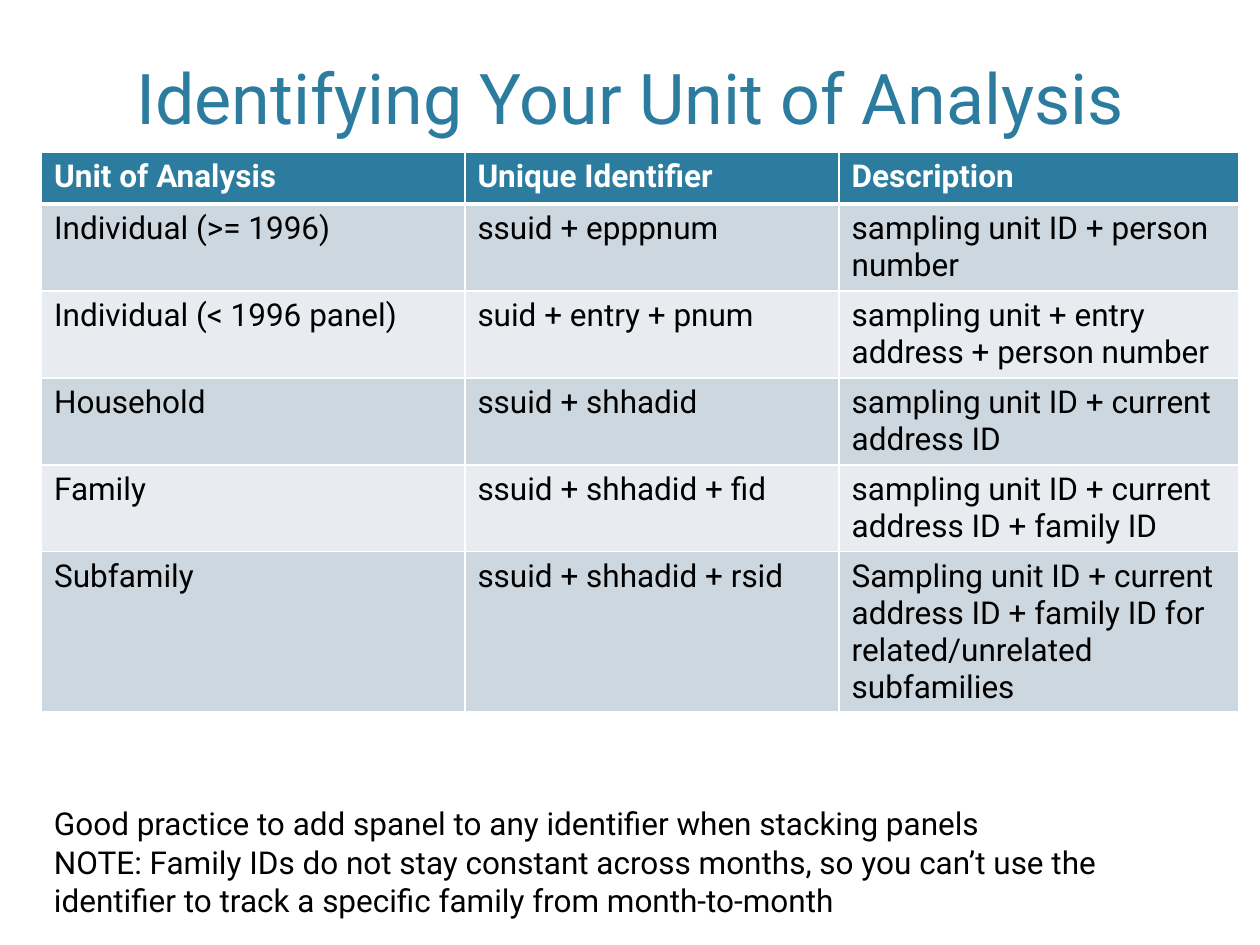
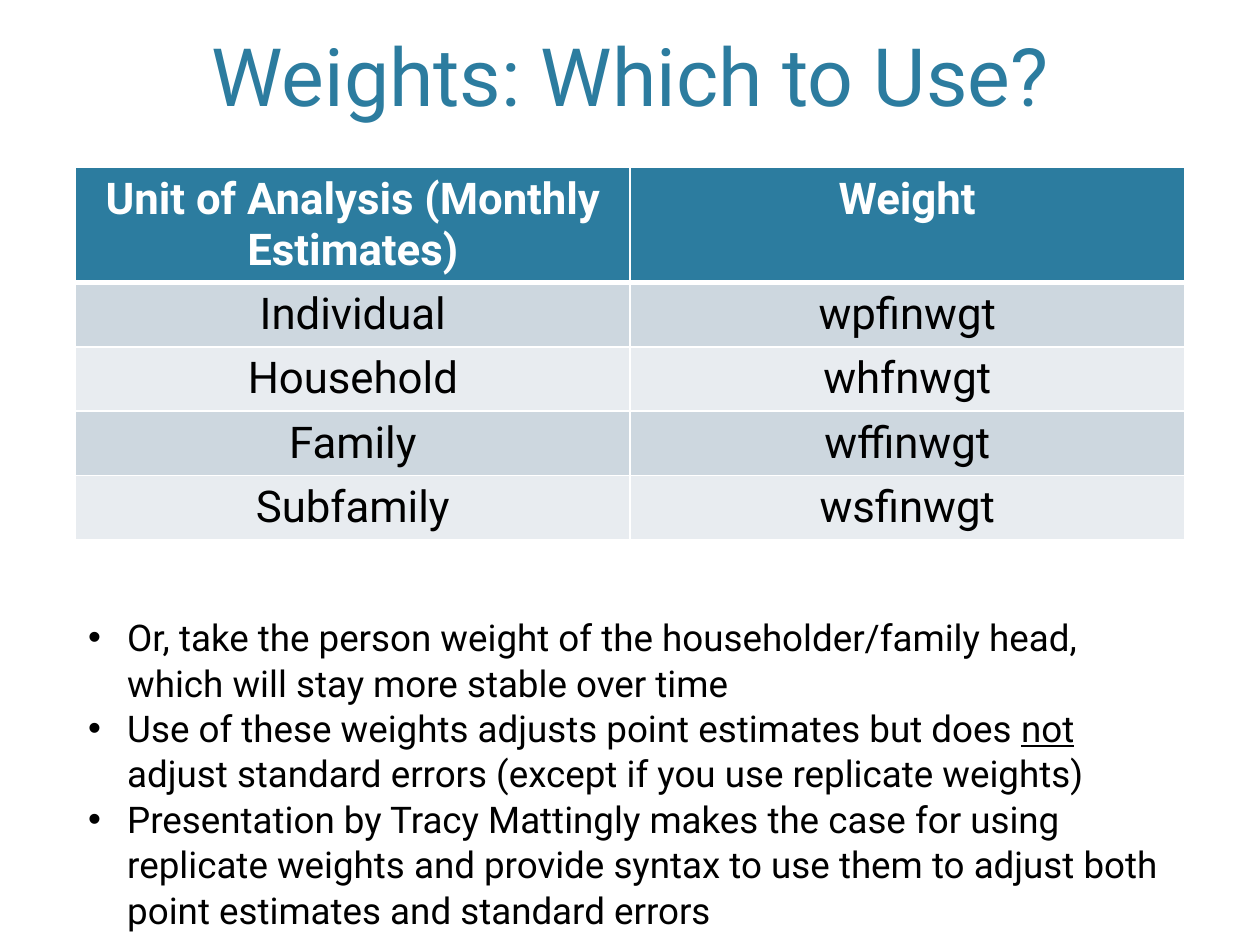
from lxml.etree import SubElement
from pptx import Presentation
from pptx.dml.color import RGBColor
from pptx.enum.text import MSO_ANCHOR as Anchor, MSO_AUTO_SIZE as AutoSize, PP_ALIGN as Align
from pptx.oxml.ns import qn
from pptx.util import Inches, Pt

FONT = "Roboto"
TEAL, WHITE, BLACK = "2C7C9F", "FFFFFF", "000000"
BANDS = ("CDD7DF", "E8ECF0")
TITLE_ONLY, TITLE_AND_BODY = 5, 1


def color(value):
    return RGBColor.from_string(value)


def border(cell, side, points):
    properties = cell._tc.get_or_add_tcPr()
    line = SubElement(properties, qn(f"a:ln{side}"), w=str(Pt(points)))
    fill = SubElement(line, qn("a:solidFill"))
    SubElement(fill, qn("a:srgbClr"), val=WHITE)
    properties.insert("LRTB".index(side), line)


class Deck:
    def __init__(self):
        self.prs = Presentation()
        self.prs.slide_width, self.prs.slide_height = Inches(10), Inches(7.5)
        self.slide = None

    def place(self, shape, left, top, width, height):
        shape.left, shape.top = Inches(left), Inches(top)
        shape.width, shape.height = Inches(width), Inches(height)

    def run(self, paragraph, text, size, fill=BLACK, bold=False, underline=False):
        run = paragraph.add_run()
        run.text = text
        font = run.font
        font.name, font.size, font.bold = FONT, Pt(size), bold
        font.color.rgb = color(fill)
        if underline:
            font.underline = True

    def add_slide(self, layout, title, size, height):
        self.slide = self.prs.slides.add_slide(self.prs.slide_layouts[layout])
        heading = self.slide.shapes.title
        self.place(heading, 0.6, 0.12, 8.8, height)
        frame = heading.text_frame
        frame.auto_size, frame.vertical_anchor = AutoSize.NONE, Anchor.BOTTOM
        frame.paragraphs[0].alignment = Align.CENTER
        self.run(frame.paragraphs[0], title, size, TEAL)

    def table(self, left, top, widths, heights, rows, size, align):
        table = self.slide.shapes.add_table(
            len(rows), len(widths), Inches(left), Inches(top),
            Inches(sum(widths)), Inches(sum(heights))).table
        table.horz_banding = False
        for column, width in zip(table.columns, widths):
            column.width = Inches(width)
        for r, (row, height) in enumerate(zip(rows, heights)):
            table.rows[r].height = Inches(height)
            header = r == 0
            for c, text in enumerate(row):
                cell = table.cell(r, c)
                cell.fill.solid()
                cell.fill.fore_color.rgb = color(TEAL if header else BANDS[(r - 1) % 2])
                for side in "LRTB":
                    heavy = (r, side) in ((0, "B"), (1, "T"))
                    border(cell, side, 3 if heavy else 1)
                paragraph = cell.text_frame.paragraphs[0]
                paragraph.alignment = align
                self.run(paragraph, text, size, WHITE if header else BLACK, header)

    def fill_text(self, frame, paragraphs, size):
        frame.word_wrap, frame.auto_size = True, AutoSize.NONE
        for i, runs in enumerate(paragraphs):
            paragraph = frame.add_paragraph() if i else frame.paragraphs[0]
            paragraph.space_before = Pt(0)
            paragraph.line_spacing = 1.03
            for text, underline in runs:
                self.run(paragraph, text, size, underline=underline)

    def note(self, left, top, width, height, lines, size):
        box = self.slide.shapes.add_textbox(
            Inches(left), Inches(top), Inches(width), Inches(height))
        self.fill_text(box.text_frame, [[(line, False)] for line in lines], size)

    def bullets(self, left, top, width, height, items, size):
        body = self.slide.placeholders[1]
        self.place(body, left, top, width, height)
        self.fill_text(body.text_frame, items, size)
        for paragraph in body.text_frame.paragraphs:
            properties = paragraph._p.get_or_add_pPr()
            properties.set("marL", str(Inches(0.31)))
            properties.set("indent", str(Inches(-0.31)))


def unit_slide(deck):
    deck.add_slide(TITLE_ONLY, "Identifying Your Unit of Analysis", 40, 1.03)
    units = [
        ("Unit of Analysis", "Unique Identifier", "Description"),
        ("Individual (>= 1996)", "ssuid + epppnum", "sampling unit ID + person number"),
        ("Individual (< 1996 panel)", "suid + entry + pnum",
         "sampling unit + entry address + person number"),
        ("Household", "ssuid + shhadid", "sampling unit ID + current address ID"),
        ("Family", "ssuid + shhadid + fid",
         "sampling unit ID + current address ID + family ID"),
        ("Subfamily", "ssuid + shhadid + rsid",
         "Sampling unit ID + current address ID + family ID for "
         "related/unrelated subfamilies"),
    ]
    deck.table(0.33, 1.21, [3.36, 2.97, 3.17], [0.41] + [0.69] * 4 + [1.27],
               units, 18, Align.LEFT)
    deck.note(0.33, 6.32, 9.5, 1.01, [
        "Good practice to add spanel to any identifier when stacking panels",
        "NOTE: Family IDs do not stay constant across months, so you can’t use the "
        "identifier to track a specific family from month-to-month",
    ], 18)


def weights_slide(deck):
    deck.add_slide(TITLE_AND_BODY, "Weights: Which to Use?", 46, 0.9)
    weights = [
        ("Unit of Analysis (Monthly Estimates)", "Weight"),
        ("Individual", "wpfinwgt"),
        ("Household", "whfnwgt"),
        ("Family", "wffinwgt"),
        ("Subfamily", "wsfinwgt"),
    ]
    deck.table(0.6, 1.33, [4.4] * 2, [0.91] + [0.51] * 4, weights, 25, Align.CENTER)
    deck.bullets(0.6, 4.82, 8.8, 2.57, [
        [("Or, take the person weight of the householder/family head, "
          "which will stay more stable over time", False)],
        [("Use of these weights adjusts point estimates but does ", False),
         ("not", True),
         (" adjust standard errors (except if you use replicate weights)", False)],
        [("Presentation by Tracy Mattingly makes the case for using replicate weights "
          "and provide syntax to use them to adjust both point estimates and "
          "standard errors", False)],
    ], 21)


def main():
    deck = Deck()
    unit_slide(deck)
    weights_slide(deck)
    deck.prs.save("out.pptx")


if __name__ == "__main__":
    main()
